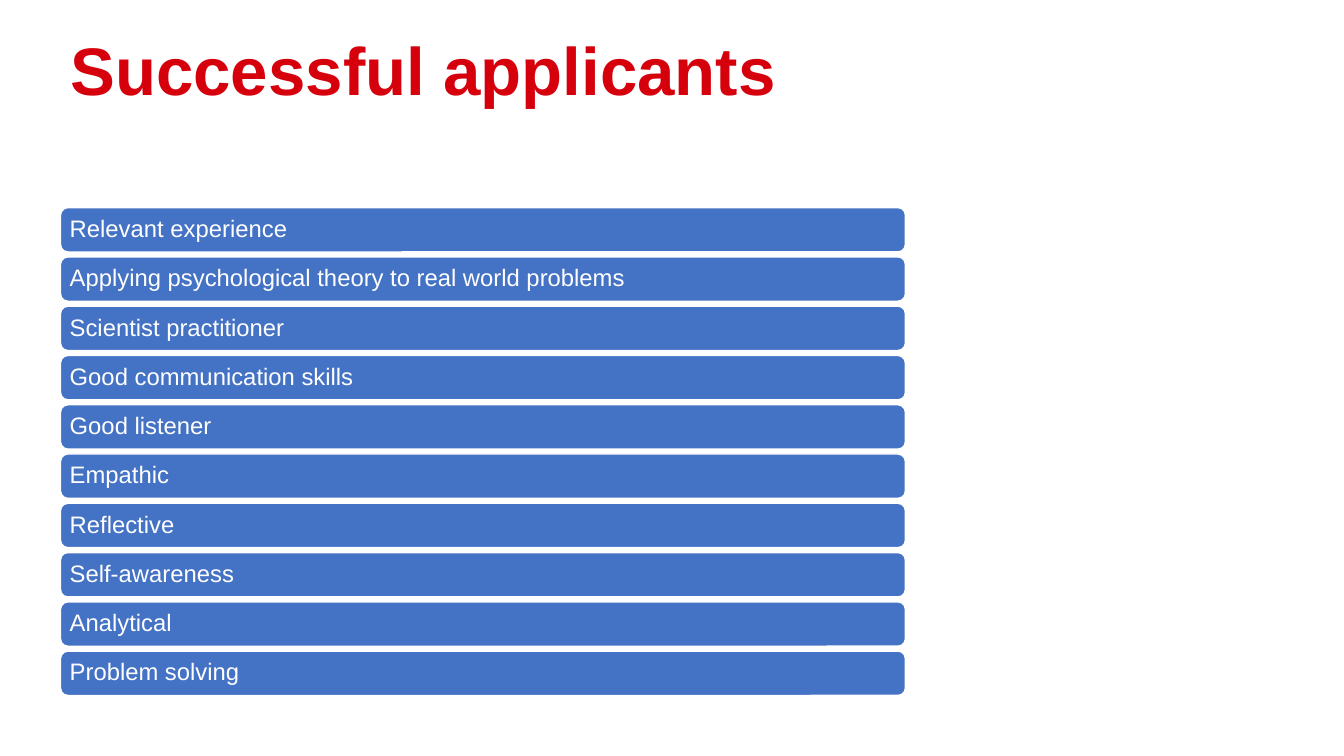
from pptx import Presentation
from pptx.dml.color import RGBColor
from pptx.enum.shapes import MSO_SHAPE
from pptx.enum.text import MSO_ANCHOR, PP_ALIGN
from pptx.util import Inches, Pt

ROUND = MSO_SHAPE.ROUNDED_RECTANGLE
MIDDLE = MSO_ANCHOR.MIDDLE
LEFT = PP_ALIGN.LEFT

FONT = "Arial"
RED, BLUE, WHITE = "D6000D", "4472C4", "FFFFFF"
TITLE = "Successful applicants"
TRAITS = [
    "Relevant experience",
    "Applying psychological theory to real world problems",
    "Scientist practitioner",
    "Good communication skills",
    "Good listener",
    "Empathic",
    "Reflective",
    "Self-awareness",
    "Analytical",
    "Problem solving",
]


def color(code):
    return RGBColor.from_string(code)


def write(frame, text, size, code, bold=False):
    frame.word_wrap = True
    para = frame.paragraphs[0]
    para.text = text
    para.alignment = LEFT
    para.line_spacing = 0.9
    font = para.font
    font.name, font.size, font.bold = FONT, Pt(size), bold
    font.color.rgb = color(code)


def add_title(slide, left, top, width, height):
    box = slide.shapes.add_textbox(
        Inches(left), Inches(top), Inches(width), Inches(height))
    write(box.text_frame, TITLE, 48, RED, bold=True)


def add_bar(slide, text, left, top, width, height):
    bar = slide.shapes.add_shape(
        ROUND, Inches(left), Inches(top), Inches(width), Inches(height))
    bar.shadow.inherit = False
    bar.fill.solid()
    bar.fill.fore_color.rgb = color(BLUE)
    bar.line.color.rgb = color(WHITE)
    bar.line.width = Pt(1)
    frame = bar.text_frame
    frame.margin_left = frame.margin_right = Inches(0.07)
    frame.margin_top = frame.margin_bottom = Inches(0)
    frame.vertical_anchor = MIDDLE
    write(frame, text, 17, WHITE)


def add_list(slide, left, top, width, height, bar=0.44):
    """Spread one bar per trait evenly over the height of the box."""
    step = (height - bar) / (len(TRAITS) - 1)
    for row, trait in enumerate(TRAITS):
        add_bar(slide, trait, left, top + row * step, width, bar)


def main():
    deck = Presentation()
    deck.slide_width, deck.slide_height = Inches(13.33), Inches(7.5)
    slide = deck.slides.add_slide(deck.slide_layouts[6])
    add_title(slide, 0.6, 0.32, 8.12, 1.07)
    add_list(slide, 0.6, 2.06, 8.38, 4.84)
    deck.save("out.pptx")


if __name__ == "__main__":
    main()
